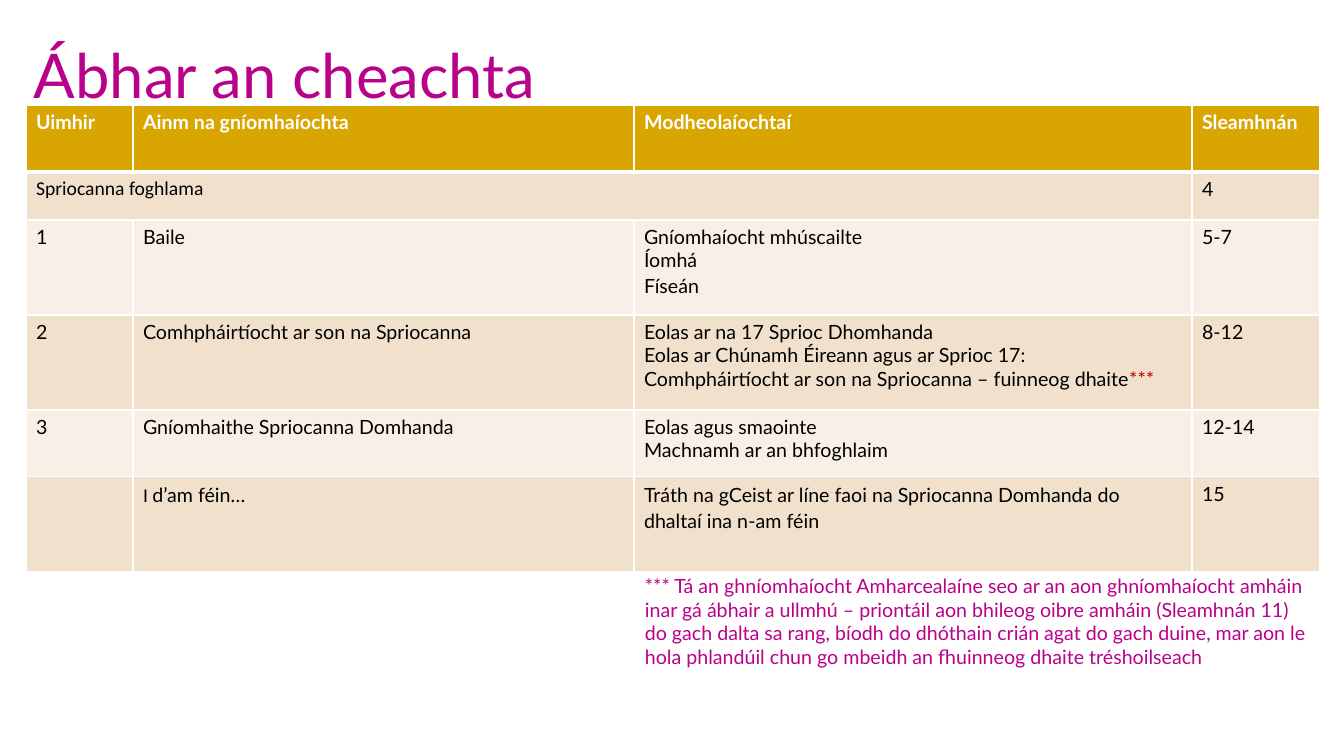
from lxml.etree import SubElement
from pptx import Presentation
from pptx.dml.color import RGBColor
from pptx.enum.text import MSO_ANCHOR
from pptx.oxml.ns import qn
from pptx.util import Pt

PX = 914400 / 100.8
COLORS = {
    "title": "B70289", "note": "B8028A", "header": "D9A500", "dark": "F1E1CC",
    "light": "F8F0E7", "white": "FFFFFF", "black": "000000", "red": "C00000",
}
FONT, ALT_FONT = "Lato", "Calibri"
COLUMNS = [107, 501, 558, 128]
ROW_HEIGHTS = [67, 48, 95, 95, 67, 95]
HEADERS = ["Uimhir", "Ainm na gníomhaíochta", "Modheolaíochtaí", "Sleamhnán"]
STARS = "***"
LESSON = [
    ["Spriocanna foghlama", "", "", "4"],
    ["1", "Baile", "Gníomhaíocht mhúscailte\nÍomhá\nFíseán", "5-7"],
    ["2", "Comhpháirtíocht ar son na Spriocanna",
     "Eolas ar na 17 Sprioc Dhomhanda\n"
     "Eolas ar Chúnamh Éireann agus ar Sprioc 17:\n"
     "Comhpháirtíocht ar son na Spriocanna – fuinneog dhaite***", "8-12"],
    ["3", "Gníomhaithe Spriocanna Domhanda",
     "Eolas agus smaointe\nMachnamh ar an bhfoghlaim", "12-14"],
    ["", "I d’am féin…",
     "Tráth na gCeist ar líne faoi na Spriocanna Domhanda do dhaltaí ina n‑am féin", "15"],
]
LOOSE = {(2, 2, 2), (5, 1, 0), (5, 2, 0)}
NOTE = (
    "*** Tá an ghníomhaíocht Amharcealaíne seo ar an aon ghníomhaíocht amháin "
    "inar gá ábhair a ullmhú – priontáil aon bhileog oibre amháin (Sleamhnán 11) "
    "do gach dalta sa rang, bíodh do dhóthain crián agat do gach duine, mar aon le "
    "hola phlandúil chun go mbeidh an fhuinneog dhaite tréshoilseach"
)


def px(n):
    """Turn pixels into EMU."""
    return round(n * PX)


def add_run(p, text, color, size=14, font=FONT, bold=False):
    """Add one styled run to a paragraph."""
    r = p.add_run()
    r.text = text
    r.font.size, r.font.name, r.font.bold = Pt(size), font, bold
    r.font.color.rgb = RGBColor.from_string(COLORS[color])


def add_text(s, box, text, color, size, anchor, spacing):
    """Place a wrapped one-paragraph text box."""
    tf = s.shapes.add_textbox(*map(px, box)).text_frame
    tf.word_wrap, tf.vertical_anchor = True, anchor
    p = tf.paragraphs[0]
    p.line_spacing = spacing
    add_run(p, text, color, size)


def style_cell(cell, fill, bottom):
    """Give a cell white borders and a solid fill."""
    tc_pr = cell._tc.get_or_add_tcPr()
    for side, width in (("L", 1), ("R", 1), ("T", 1), ("B", bottom)):
        ln = SubElement(tc_pr, qn(f"a:ln{side}"), w=str(Pt(width)))
        solid = SubElement(ln, qn("a:solidFill"))
        SubElement(solid, qn("a:srgbClr"), val=COLORS["white"])
    cell.fill.solid()
    cell.fill.fore_color.rgb = RGBColor.from_string(COLORS[fill])


def fill_cell(cell, row, col, text):
    """Write the paragraphs of one cell."""
    color = "black" if row else "white"
    for i, line in enumerate(text.split("\n") if text else []):
        tf = cell.text_frame
        p = tf.add_paragraph() if i else tf.paragraphs[0]
        if (row, col, i) in LOOSE:
            p.line_spacing, p.space_after = 1.07, Pt(8)
        if line.startswith("I "):
            add_run(p, "I ", color, font=ALT_FONT)
            line = line.removeprefix("I ")
        font = ALT_FONT if (row, col) == (1, 0) else FONT
        add_run(p, line.removesuffix(STARS), color, font=font, bold=row == 0)
        if line.endswith(STARS):
            add_run(p, STARS, "red")


def add_lesson_table(s, left, top):
    """Build the table of lesson activities."""
    rows = [HEADERS] + LESSON
    frame = s.shapes.add_table(len(rows), len(COLUMNS), px(left), px(top),
                               px(sum(COLUMNS)), px(sum(ROW_HEIGHTS)))
    table = frame.table
    for column, width in zip(table.columns, COLUMNS):
        column.width = px(width)
    for r, (texts, height) in enumerate(zip(rows, ROW_HEIGHTS)):
        table.rows[r].height = px(height)
        fill = "header" if r == 0 else "dark" if r % 2 else "light"
        for c, text in enumerate(texts):
            style_cell(table.cell(r, c), fill, 1 if r else 3)
            fill_cell(table.cell(r, c), r, c, text)
    table.cell(1, 0).merge(table.cell(1, 2))


def add_lesson_slide(prs):
    """Lay out the lesson contents slide."""
    s = prs.slides.add_slide(prs.slide_layouts[6])
    add_lesson_table(s, 26, 105)
    add_text(s, (635, 569, 684, 152), NOTE, "note", 14, MSO_ANCHOR.TOP, 1.0)
    add_text(s, (24, 6, 1159, 146), "Ábhar an cheachta", "title", 44, MSO_ANCHOR.MIDDLE, 0.9)


def main():
    """Create and save the presentation."""
    prs = Presentation()
    prs.slide_width, prs.slide_height = px(1344), px(756)
    add_lesson_slide(prs)
    prs.save("out.pptx")


if __name__ == "__main__":
    main()
